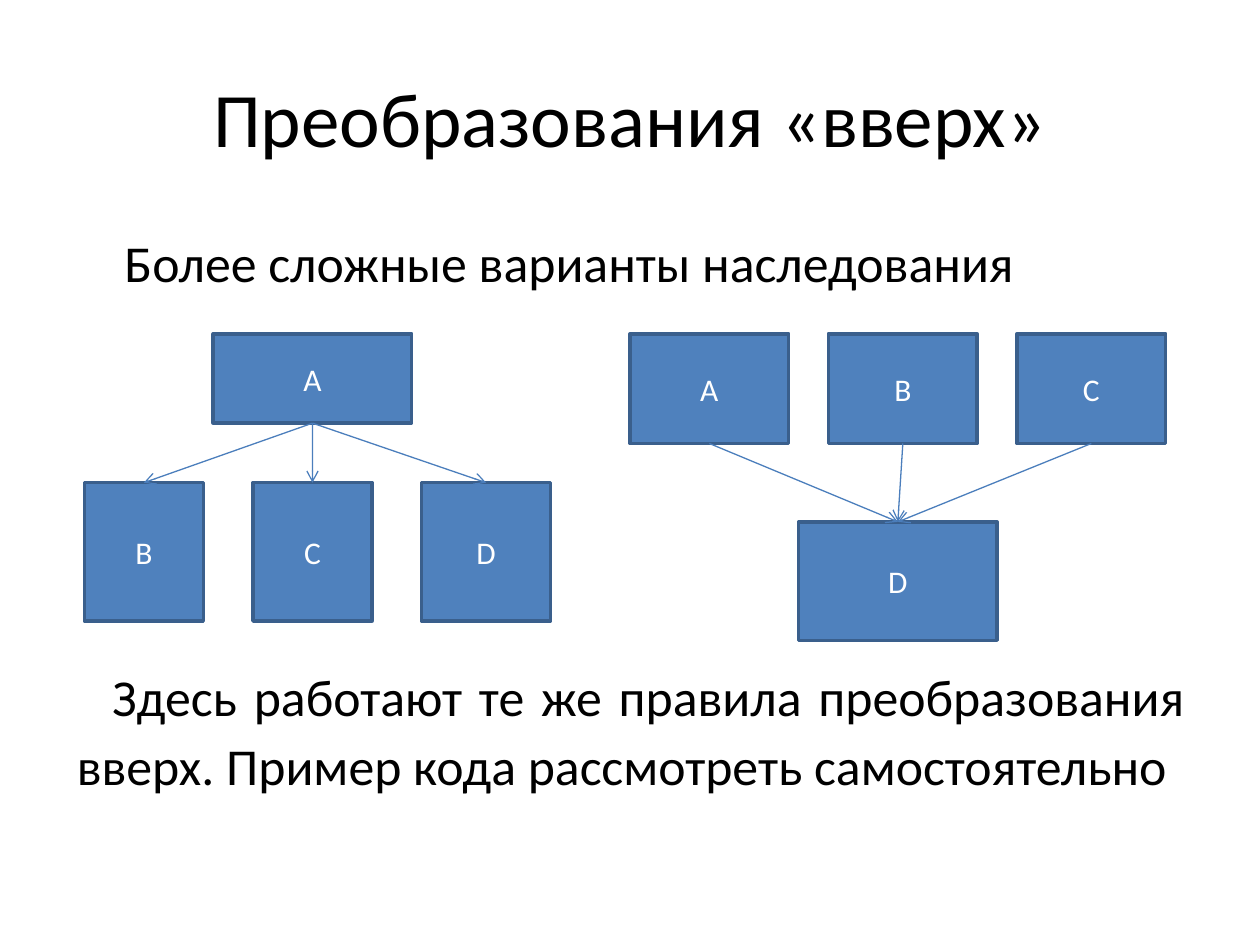
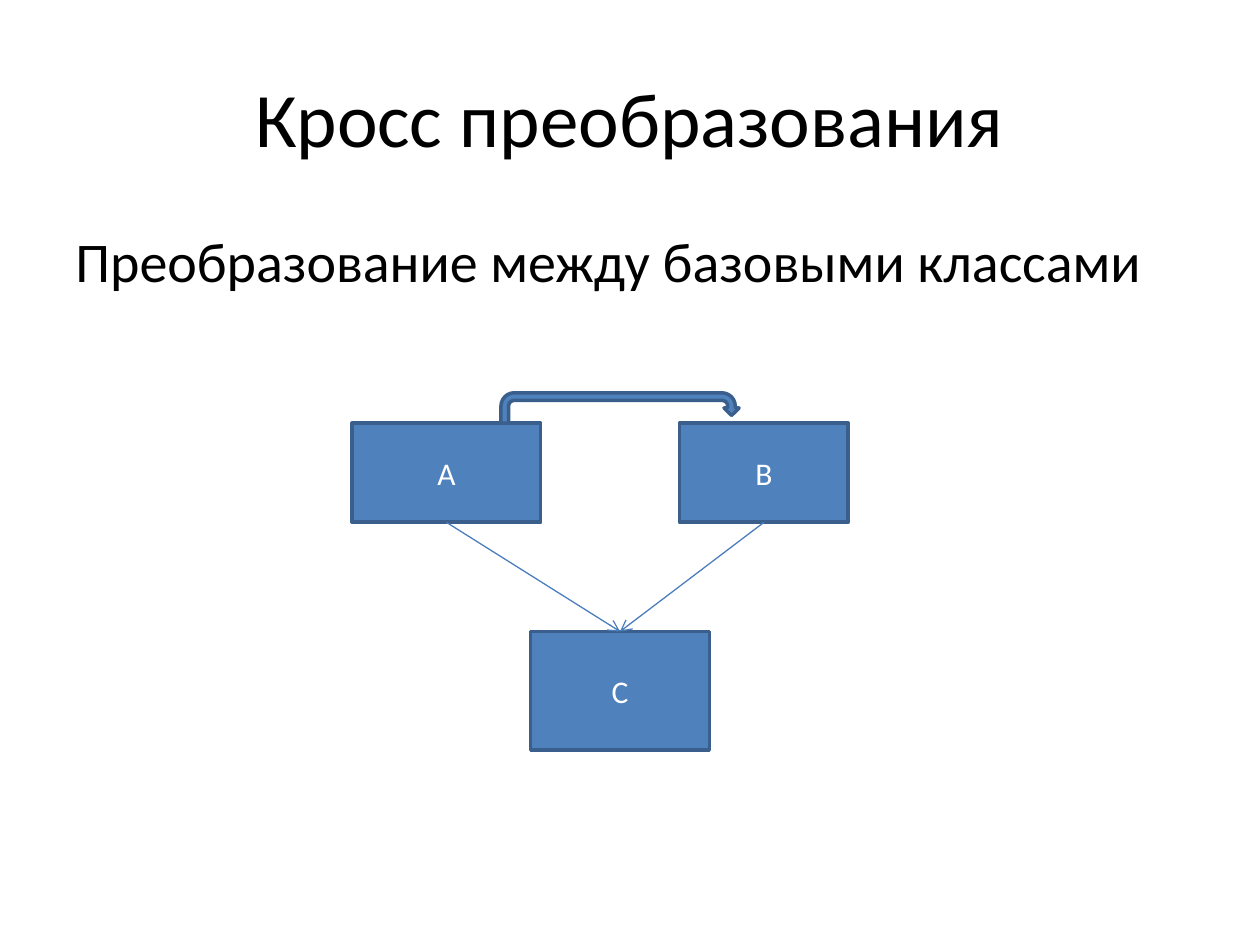
from lxml import etree
from pptx import Presentation
from pptx import util as u
from pptx.dml.color import RGBColor
from pptx.enum import shapes, text
from pptx.oxml import ns

COLORS = {"ink": "000000", "label": "FFFFFF", "box": "4F81BD",
          "border": "3A5F8C", "arrow": "4B7EBC"}
FONT = "Calibri"
TITLE_AREA = (1.27, 0.76, 22.86, 3.18)
BOX = shapes.MSO_SHAPE.RECTANGLE
UTURN = shapes.MSO_SHAPE.U_TURN_ARROW
BOTTOM, TOP = 2, 0


def write(frame, words, size=18, color="ink", align="CENTER", anchor="MIDDLE",
          first_indent=0, spacing=1.0):
    frame.word_wrap = True
    frame.vertical_anchor = text.MSO_ANCHOR[anchor]
    paragraph = frame.paragraphs[0]
    paragraph.alignment = text.PP_ALIGN[align]
    paragraph.line_spacing = spacing
    if first_indent:
        paragraph._p.get_or_add_pPr().set("indent", str(u.Cm(first_indent)))
    run = paragraph.add_run()
    run.text = words
    run.font.size = u.Pt(size)
    run.font.name = FONT
    run.font.color.rgb = RGBColor.from_string(COLORS[color])


# Shared rows of the inheritance diagrams: (top, height)
fork_top, fork_bottom = (6.73, 1.8), (9.73, 2.79)
join_top, join_bottom = (6.73, 2.21), (10.52, 2.39)
cross_top, cross_bottom = (8.53, 2.0), (12.73, 2.39)

# Notes: area and wording; classes: key, label, left, width, row; links: from, to
topics = [
    {
        "title": "Преобразования «вверх»",
        "notes": [
            ((2.26, 4.52, 21.9, 1.6), "Более сложные варианты наследования",
             {"size": 29.6}),
            ((1.3, 13.16, 22.86, 3.6),
             "Здесь работают те же правила преобразования вверх. "
             "Пример кода рассмотреть самостоятельно",
             {"size": 29.6, "align": "JUSTIFY", "first_indent": 0.71,
              "spacing": 1.1}),
        ],
        "classes": [
            ("fork A", "A", 4.3, 4.0, fork_top),
            ("fork B", "B", 1.7, 2.4, fork_bottom),
            ("fork C", "C", 5.1, 2.4, fork_bottom),
            ("fork D", "D", 8.5, 2.6, fork_bottom),
            ("join A", "A", 12.7, 3.2, join_top),
            ("join B", "B", 16.7, 3.0, join_top),
            ("join C", "C", 20.5, 3.0, join_top),
            ("join D", "D", 16.1, 4.0, join_bottom),
        ],
        "links": [("fork A", f"fork {child}") for child in "BCD"]
                 + [(f"join {base}", "join D") for base in "ABC"],
    },
    {
        "title": "Кросс преобразования",
        "notes": [
            ((1.27, 4.45, 22.86, 1.7), "Преобразование между базовыми классами",
             {"size": 32}),
        ],
        "classes": [
            ("A", "A", 7.1, 3.8, cross_top),
            ("B", "B", 13.7, 3.4, cross_top),
            ("C", "C", 10.7, 3.6, cross_bottom),
            ("cast", "", 10.1, 4.8, (7.92, 0.61)),
        ],
        "links": [("A", "C"), ("B", "C")],
    },
]

deck = Presentation()
deck.slide_width, deck.slide_height = u.Cm(25.4), u.Cm(19.05)

for topic in topics:
    slide = deck.slides.add_slide(deck.slide_layouts[5])

    # Title
    title = slide.shapes.title
    title.left, title.top, title.width, title.height = map(u.Cm, TITLE_AREA)
    write(title.text_frame, topic["title"], size=44)

    # Explanatory text
    for area, words, style in topic["notes"]:
        note = slide.shapes.add_textbox(*map(u.Cm, area))
        write(note.text_frame, words, **{"align": "LEFT", "anchor": "TOP", **style})

    # Classes; the unlabelled item is the bent cast arrow
    drawn = {}
    for key, label, left, width, (top, height) in topic["classes"]:
        area = map(u.Cm, (left, top, width, height))
        item = slide.shapes.add_shape(BOX if label else UTURN, *area)
        item.shadow.inherit = False
        item.fill.solid()
        item.fill.fore_color.rgb = RGBColor.from_string(COLORS["box"])
        item.line.color.rgb = RGBColor.from_string(COLORS["border"])
        item.line.width = u.Pt(2)
        if label:
            write(item.text_frame, label, color="label")
        drawn[key] = item

    # Inheritance arrows
    for start, end in topic["links"]:
        link = slide.shapes.add_connector(shapes.MSO_CONNECTOR.STRAIGHT, 0, 0, 0, 0)
        link.begin_connect(drawn[start], BOTTOM)
        link.end_connect(drawn[end], TOP)
        link.line.color.rgb = RGBColor.from_string(COLORS["arrow"])
        link.line.width = u.Pt(0.75)
        etree.SubElement(link.line._get_or_add_ln(), ns.qn("a:tailEnd"), type="arrow")
        etree.SubElement(link._element.spPr, ns.qn("a:effectLst"))

deck.save("out.pptx")
